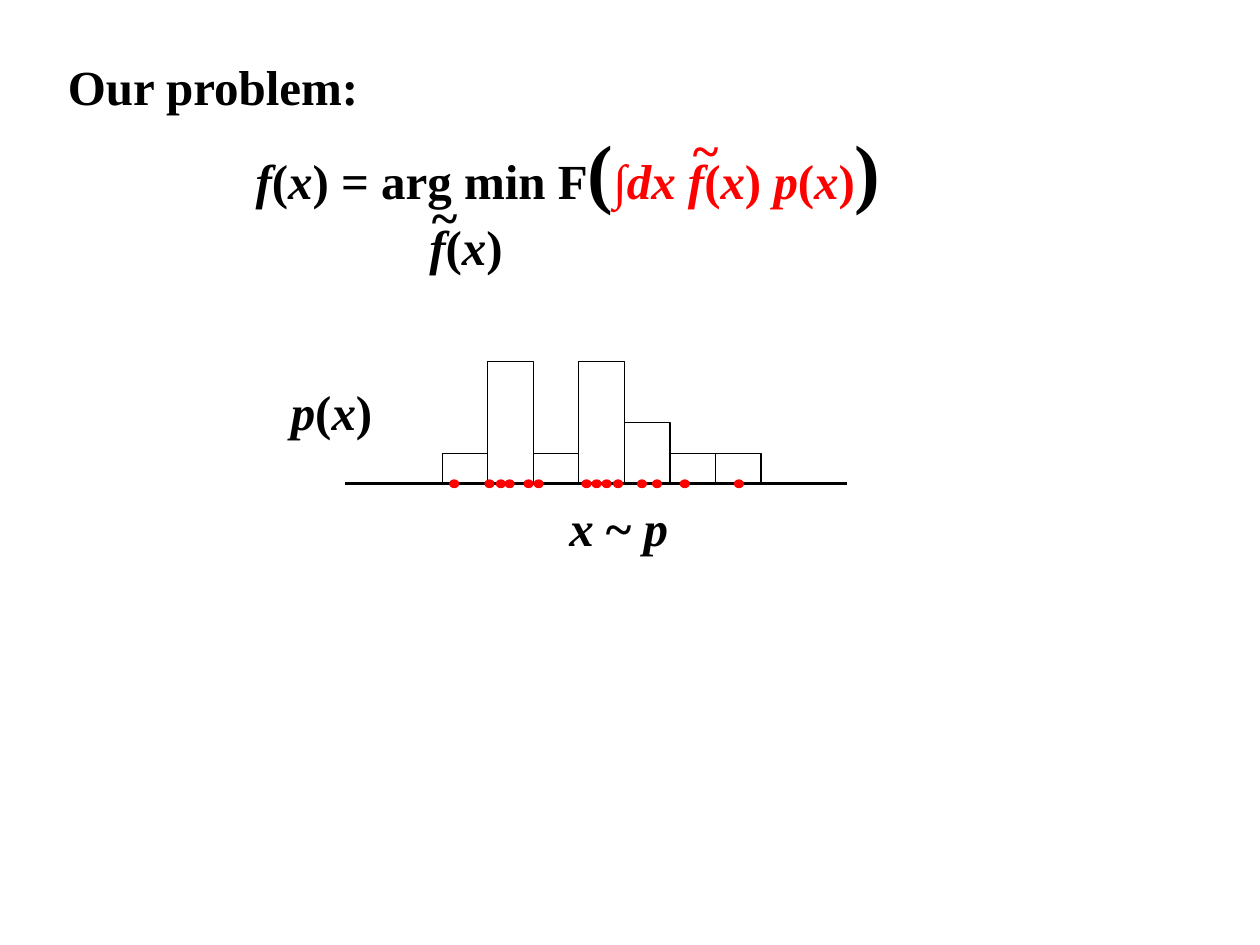
from lxml.etree import SubElement
from pptx import Presentation
from pptx.dml.color import RGBColor
from pptx.enum.shapes import MSO_CONNECTOR as Connector, MSO_SHAPE as Shape
from pptx.enum.text import MSO_AUTO_SIZE as AutoSize
from pptx.oxml.ns import qn
from pptx.util import Inches, Pt

COLORS = {"black": "000000", "red": "FF0000"}
FONT = "Times New Roman"
TEXT_SIZE, BRACKET_SIZE = 28, 44

# Runs are (text, style letters): i = italic, r = red, b = big bracket
OBJECTIVE = [
    ("f", "i"), ("(", ""), ("x", "i"), (") = arg min F", ""), ("(", "b"),
    ("∫", "r"), ("dx f", "ir"), ("(", "r"), ("x", "ir"), (") ", "r"),
    ("p", "ir"), ("(", "r"), ("x", "ir"), (")", "r"), (")", "b"),
]
CANDIDATE = [("f", "i"), ("(", ""), ("x", "i"), (")", "")]
DENSITY = [("p", "i"), ("(", ""), ("x", "i"), (")", "")]
SAMPLING = [("x", "i"), (" ~ ", ""), ("p", "i")]

# runs, left, top, width, height, wrap
FORMULAS = [
    (OBJECTIVE, 1.93, 0.92, 6.38, 0.84, True),
    (CANDIDATE, 3.31, 1.67, 0.79, 0.57, False),
    ([("Our problem:", "")], 0.44, 0.4, 2.53, 0.57, False),
]
LABELS = [
    (SAMPLING, 4.42, 3.9, 0.99, 0.57, False),
    (DENSITY, 2.21, 2.98, 0.86, 0.57, False),
    ([("~", "")], 3.33, 1.43, 0.41, 0.57, False),
    ([("~", "r")], 5.4, 0.9, 0.41, 0.57, False),
]

BIN_COUNTS = [1, 4, 1, 4, 2, 1, 1]
BINS_LEFT, BINS_WIDTH = 3.51, 2.53
TALLEST_BAR = 0.97
AXIS_LEFT, AXIS_RIGHT, AXIS_Y = 2.74, 6.72, 3.84
SAMPLE_LEFTS = [3.57, 3.85, 3.94, 4.01, 4.16, 4.24, 4.62,
                4.7, 4.78, 4.87, 5.06, 5.18, 5.4, 5.83]
SAMPLE_WIDTH, SAMPLE_HEIGHT = 0.07, 0.06


def color(name):
    return RGBColor.from_string(COLORS[name])


def add_text(slide, runs, left, top, width, height, *, wrap=False):
    box = slide.shapes.add_textbox(*map(Inches, (left, top, width, height)))
    frame = box.text_frame
    frame.word_wrap = wrap
    frame.auto_size = AutoSize.SHAPE_TO_FIT_TEXT
    for text, style in runs:
        run = frame.paragraphs[0].add_run()
        run.text = text
        font = run.font
        font.name = FONT
        font.bold = True
        font.italic = "i" in style
        font.size = Pt(BRACKET_SIZE if "b" in style else TEXT_SIZE)
        font.color.rgb = color("red" if "r" in style else "black")


def add_outlined(shapes, kind, left, top, width, height, *, line, fill=None):
    shape = shapes.add_shape(kind, *map(Inches, (left, top, width, height)))
    shape.shadow.inherit = False
    shape.line.color.rgb = color(line)
    shape.line.width = Pt(0.75)
    if fill:
        shape.fill.solid()
        shape.fill.fore_color.rgb = color(fill)
    else:
        shape.fill.background()


def add_histogram(slide):
    bars = slide.shapes.add_group_shape().shapes
    bar_width = BINS_WIDTH / len(BIN_COUNTS)
    for column, count in enumerate(BIN_COUNTS):
        height = TALLEST_BAR * count / max(BIN_COUNTS)
        add_outlined(bars, Shape.RECTANGLE, BINS_LEFT + column * bar_width,
                     AXIS_Y - height, bar_width, height, line="black")


def add_axis(slide):
    axis = slide.shapes.add_connector(
        Connector.STRAIGHT, *map(Inches, (AXIS_LEFT, AXIS_Y, AXIS_RIGHT, AXIS_Y)))
    axis.line.color.rgb = color("black")
    axis.line.width = Pt(1.5)
    SubElement(axis._element.spPr, qn("a:effectLst"))


def add_samples(slide):
    for left in SAMPLE_LEFTS:
        add_outlined(slide.shapes, Shape.OVAL, left, AXIS_Y - SAMPLE_HEIGHT / 2,
                     SAMPLE_WIDTH, SAMPLE_HEIGHT, line="red", fill="red")


def main():
    presentation = Presentation()
    presentation.slide_width = Inches(10)
    presentation.slide_height = Inches(7.5)
    slide = presentation.slides.add_slide(presentation.slide_layouts[6])
    for runs, *place, wrap in FORMULAS:
        add_text(slide, runs, *place, wrap=wrap)
    add_histogram(slide)
    add_axis(slide)
    add_samples(slide)
    for runs, *place, wrap in LABELS:
        add_text(slide, runs, *place, wrap=wrap)
    presentation.save("out.pptx")


if __name__ == "__main__":
    main()
